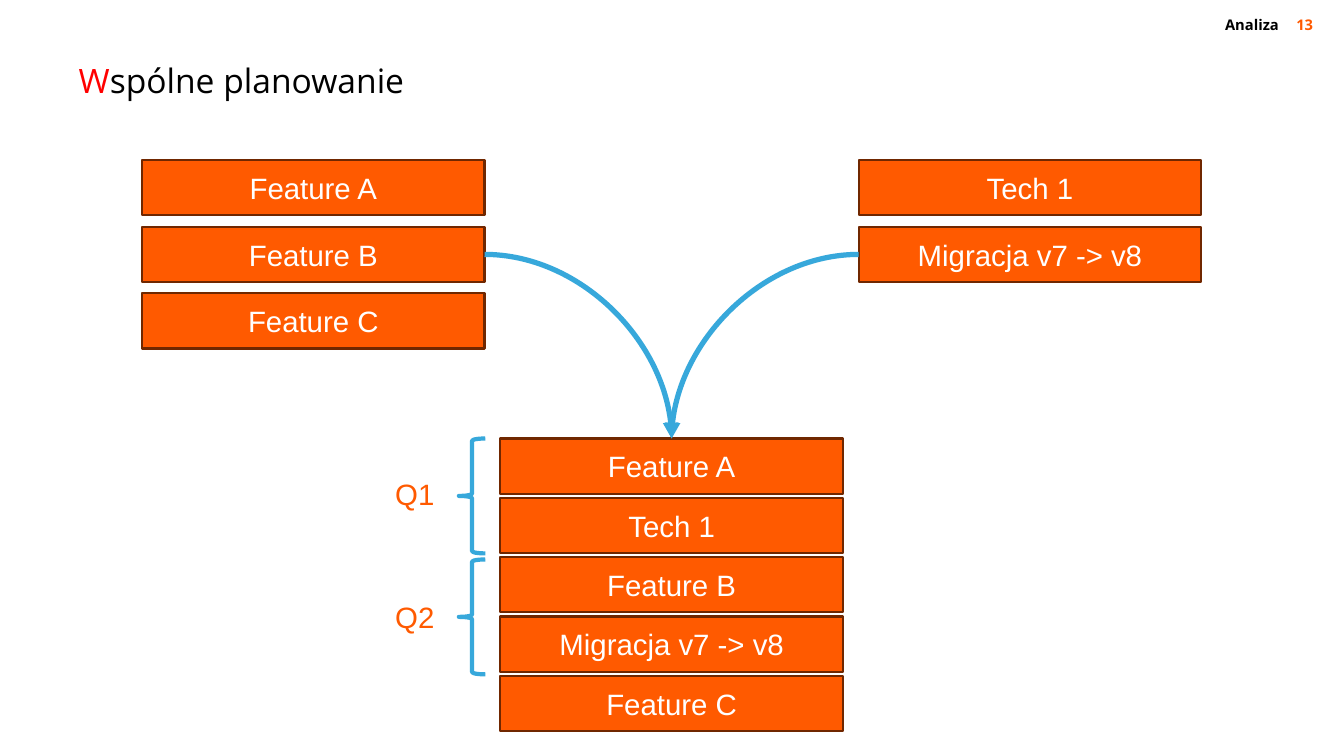
import pptx
import pptx.dml.color
import pptx.enum.shapes
import pptx.enum.text
import pptx.oxml.ns
import pptx.oxml.xmlchemy
import pptx.util
from lxml import etree

Inches = pptx.util.Inches
Pt = pptx.util.Pt
Align = pptx.enum.text.PP_ALIGN
Shape = pptx.enum.shapes.MSO_SHAPE
qn = pptx.oxml.ns.qn

ORANGE, DARK_ORANGE, BLUE = "FF5A00", "702700", "37A8DB"
BLACK, WHITE, RED = "000000", "FFFFFF", "FF0000"
BAR_WIDTH, BAR_HEIGHT = 4.53, 0.73
TOP, RIGHT = 0, 3  # connection sites of a rectangle


def color(hex_value):
    return pptx.dml.color.RGBColor.from_string(hex_value)


class PlanningSlide:
    heading_font = "Open Sans"
    body_font = "Arial"

    def __init__(self, presentation):
        self.slide = presentation.slides.add_slide(presentation.slide_layouts[5])
        self.shapes = self.slide.shapes

    def style(self, font, name, size, hex_value, bold=False):
        font.name, font.size, font.bold = name, Pt(size), bold
        font.color.rgb = color(hex_value)

    def frame(self, shape, margin, wrap=True):
        frame = shape.text_frame
        frame.word_wrap = wrap
        frame.auto_size = pptx.enum.text.MSO_AUTO_SIZE.NONE
        frame.vertical_anchor = pptx.enum.text.MSO_ANCHOR.MIDDLE
        frame.margin_left = frame.margin_right = Inches(margin)
        frame.margin_top = frame.margin_bottom = Inches(min(margin, 0.05))
        return frame

    def title(self, initial, rest):
        title = self.shapes.title
        title.left, title.top = Inches(1), Inches(0.75)
        title.width, title.height = Inches(15.78), Inches(0.61)
        paragraph = self.frame(title, 0.04).paragraphs[0]
        paragraph.alignment = Align.LEFT
        for text, hex_value in ((initial, RED), (rest, BLACK)):
            run = paragraph.add_run()
            run.text = text
            self.style(run.font, self.heading_font, 32, hex_value)

    def header(self, text, left, width, margin, hex_value):
        box = self.shapes.add_textbox(Inches(left), Inches(0.15), Inches(width), Inches(0.35))
        paragraph = self.frame(box, margin).paragraphs[0]
        paragraph.text = text
        paragraph.alignment = Align.RIGHT
        self.style(paragraph.font, self.heading_font, 14, hex_value, bold=True)

    def stack(self, names, left, top, pitch):
        return [self.bar(name, left, top + i * pitch) for i, name in enumerate(names)]

    def bar(self, name, left, top):
        bar = self.shapes.add_shape(Shape.RECTANGLE, Inches(left), Inches(top),
                                    Inches(BAR_WIDTH), Inches(BAR_HEIGHT))
        bar.shadow.inherit = False
        bar.fill.solid()
        bar.fill.fore_color.rgb = color(ORANGE)
        bar.line.color.rgb = color(DARK_ORANGE)
        bar.line.width = Pt(2)
        paragraph = self.frame(bar, 0.1).paragraphs[0]
        paragraph.text = name
        paragraph.alignment = Align.CENTER
        self.style(paragraph.font, self.body_font, 28, WHITE)
        return bar

    def curved_arrow(self, source, side, target):
        start_x = source.left + (source.width if side == RIGHT else 0)
        arrow = self.shapes.add_connector(
            pptx.enum.shapes.MSO_CONNECTOR.CURVE,
            start_x, source.top + source.height // 2,
            target.left + target.width // 2, target.top)
        arrow.line.color.rgb = color(BLUE)
        arrow.line.width = Pt(5)
        # A quarter curve that leaves sideways and lands from above
        properties = arrow.element.find(qn("p:spPr"))
        properties.find(qn("a:prstGeom")).set("prst", "curvedConnector2")
        line = properties.find(qn("a:ln"))
        etree.SubElement(line, qn("a:tailEnd"), type="triangle")
        etree.SubElement(properties, qn("a:effectLst"))

    def quarter(self, name, brace_top, label_top):
        brace = self.shapes.add_shape(Shape.LEFT_BRACE, Inches(6.07), Inches(brace_top),
                                      Inches(0.35), Inches(1.52))
        brace.shadow.inherit = False
        brace.fill.background()
        brace.line.color.rgb = color(BLUE)
        brace.line.width = Pt(4)
        label = self.shapes.add_textbox(Inches(5.13), Inches(label_top), Inches(0.73), Inches(0.57))
        paragraph = self.frame(label, 0.1, wrap=False).paragraphs[0]
        paragraph.text = name
        self.style(paragraph.font, self.body_font, 28, ORANGE)


def main():
    presentation = pptx.Presentation()
    presentation.slide_width, presentation.slide_height = Inches(17.78), Inches(10)
    planning = PlanningSlide(presentation)

    # Header and title
    planning.header("13", 16.97, 0.5, 0.1, ORANGE)
    planning.header("Analiza", 11.96, 5, 0.04, BLACK)
    planning.title("W", "spólne planowanie")

    # Two backlogs and the shared plan
    features = planning.stack(["Feature A", "Feature B", "Feature C"], 1.88, 2.12, 0.88)
    technical = planning.stack(["Tech 1", "Migracja v7 -> v8"], 11.36, 2.12, 0.88)
    plan = planning.stack(["Feature A", "Tech 1", "Feature B", "Migracja v7 -> v8", "Feature C"],
                          6.62, 5.8, 0.785)

    # Both backlogs flow into the plan
    planning.curved_arrow(features[1], RIGHT, plan[0])
    planning.curved_arrow(technical[1], TOP, plan[0])

    # Quarters
    planning.quarter("Q1", 5.8, 6.25)
    planning.quarter("Q2", 7.4, 7.87)

    presentation.save("out.pptx")


if __name__ == "__main__":
    main()
